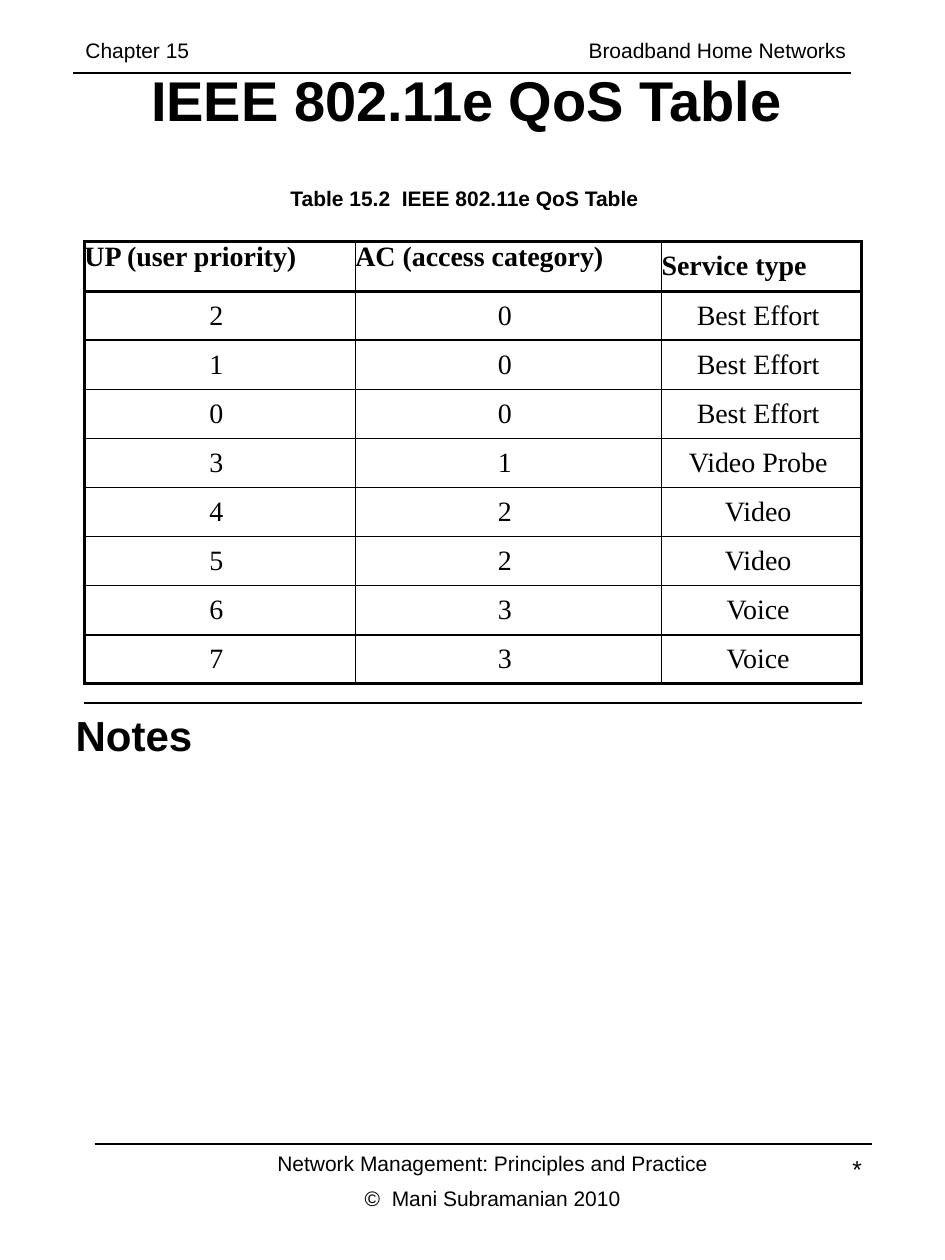
from pptx import Presentation
from pptx.dml.color import RGBColor
from pptx.enum import shapes, text
from pptx.oxml import parse_xml
from pptx.oxml.ns import nsdecls, qn
from pptx import util as u
from lxml import etree

COLORS = {"ink": "000000", "page": "FFFFFF"}
AL, AN = text.PP_ALIGN, text.MSO_ANCHOR


class Page:
    """Holds the style and the slide, and draws each kind of element."""

    def __init__(self, slide, font="Arial", table_font="Times New Roman"):
        self.slide, self.font, self.table_font = slide, font, table_font
        self.ink = RGBColor.from_string(COLORS["ink"])
        slide.background.fill.solid()
        slide.background.fill.fore_color.rgb = RGBColor.from_string(COLORS["page"])

    def add_words(self, p, words, align, **style):
        p.alignment = align
        r = p.add_run()
        r.text = words
        r.font.color.rgb = self.ink
        for key, value in {"name": self.font, "bold": False, **style}.items():
            setattr(r.font, key, value)

    def text(self, box, lines, size, align=AL.LEFT, bold=False, gap=0, tab=None, **frame):
        tf = self.slide.shapes.add_textbox(*map(u.Inches, box)).text_frame
        for key, value in {"word_wrap": True, **frame}.items():
            setattr(tf, key, value)
        for i, line in enumerate(lines):
            p = tf.add_paragraph() if i else tf.paragraphs[0]
            self.add_words(p, line, align, size=u.Pt(size), bold=bold)
            p.space_before = u.Pt(gap if i else 0)
            if tab:
                tabs = etree.SubElement(p._p.get_or_add_pPr(), qn("a:tabLst"))
                etree.SubElement(tabs, qn("a:tab"), pos=str(u.Inches(tab)), algn="r")

    def rule(self, x, y, length=6.17):
        ends = map(u.Inches, (x, y, x + length, y))
        sp = self.slide.shapes.add_connector(shapes.MSO_CONNECTOR.STRAIGHT, *ends)
        sp.line.color.rgb = self.ink
        sp.line.width = u.Pt(1)
        etree.SubElement(sp._element.spPr, qn("a:effectLst"))

    def borders(self, cell, widths):
        tc_pr = cell._tc.get_or_add_tcPr()
        for i, (side, width) in enumerate(zip("LRTB", widths)):
            tc_pr.insert(i, parse_xml(
                f'<a:ln{side} {nsdecls("a")} w="{u.Pt(width)}"><a:solidFill>'
                f'<a:srgbClr val="{COLORS["ink"]}"/></a:solidFill></a:ln{side}>'))

    def table(self, x, y, widths, row_height, rows):
        last_row, last_col = len(rows) - 1, len(widths) - 1
        box = (x, y, sum(widths), row_height * len(rows))
        tbl = self.slide.shapes.add_table(len(rows), len(widths), *map(u.Inches, box)).table
        tbl.first_row = tbl.horz_banding = False
        for col, width in zip(tbl.columns, widths):
            col.width = u.Inches(width)
        for i, row in enumerate(rows):
            tbl.rows[i].height = u.Inches(row_height)
            for j, value in enumerate(row):
                cell, head = tbl.cell(i, j), i == 0
                for side in ("left", "right", "top", "bottom"):
                    setattr(cell, f"margin_{side}", 0)
                cell.vertical_anchor = AN.TOP if head and j < last_col else AN.MIDDLE
                cell.fill.background()
                self.add_words(cell.text_frame.paragraphs[0], value if head else f"{value} ",
                               AL.JUSTIFY if head else AL.CENTER,
                               name=self.table_font, size=u.Pt(16), bold=head)
                heavy = (j == 0, j == last_col, i <= 1, i in (0, last_row))
                self.borders(cell, [2 if h else 1 for h in heavy])


def main():
    prs = Presentation()
    prs.slide_width, prs.slide_height = u.Inches(7.5), u.Inches(10)
    page = Page(prs.slides.add_slide(prs.slide_layouts[6]))

    page.text((0.58, 0.25, 6.3, 0.3), ["Chapter 15\tBroadband Home Networks"], 12, tab=6.04)
    page.text((0.58, 0.58, 6.25, 0.42), ["IEEE 802.11e QoS Table"], 32, AL.CENTER, True,
              vertical_anchor=AN.MIDDLE)
    page.text((0.67, 1.42, 6.08, 0.3), ["Table 15.2  IEEE 802.11e QoS Table "], 12,
              AL.CENTER, True)
    page.table(0.67, 1.92, (2.15, 2.43, 1.59), 0.39, [
        ("UP (user priority)", "AC (access category)", "Service type"),
        (2, 0, "Best Effort"),
        (1, 0, "Best Effort"),
        (0, 0, "Best Effort"),
        (3, 1, "Video Probe"),
        (4, 2, "Video"),
        (5, 2, "Video"),
        (6, 3, "Voice"),
        (7, 3, "Voice"),
    ])
    page.text((0, 5.58, 1.67, 0.5), ["Notes"], 24, bold=True, margin_left=u.Inches(0.6))
    page.text((2, 9.08, 3.82, 0.61), ["Network Management: Principles and Practice",
                                      "©  Mani Subramanian 2010"], 12, AL.CENTER, gap=6)
    page.text((5.38, 9.11, 1.56, 0.67), ["*"], 14, AL.RIGHT)
    for x, y in ((0.58, 0.58), (0.67, 5.58), (0.75, 9.08)):
        page.rule(x, y)
    prs.save("out.pptx")


if __name__ == "__main__":
    main()
